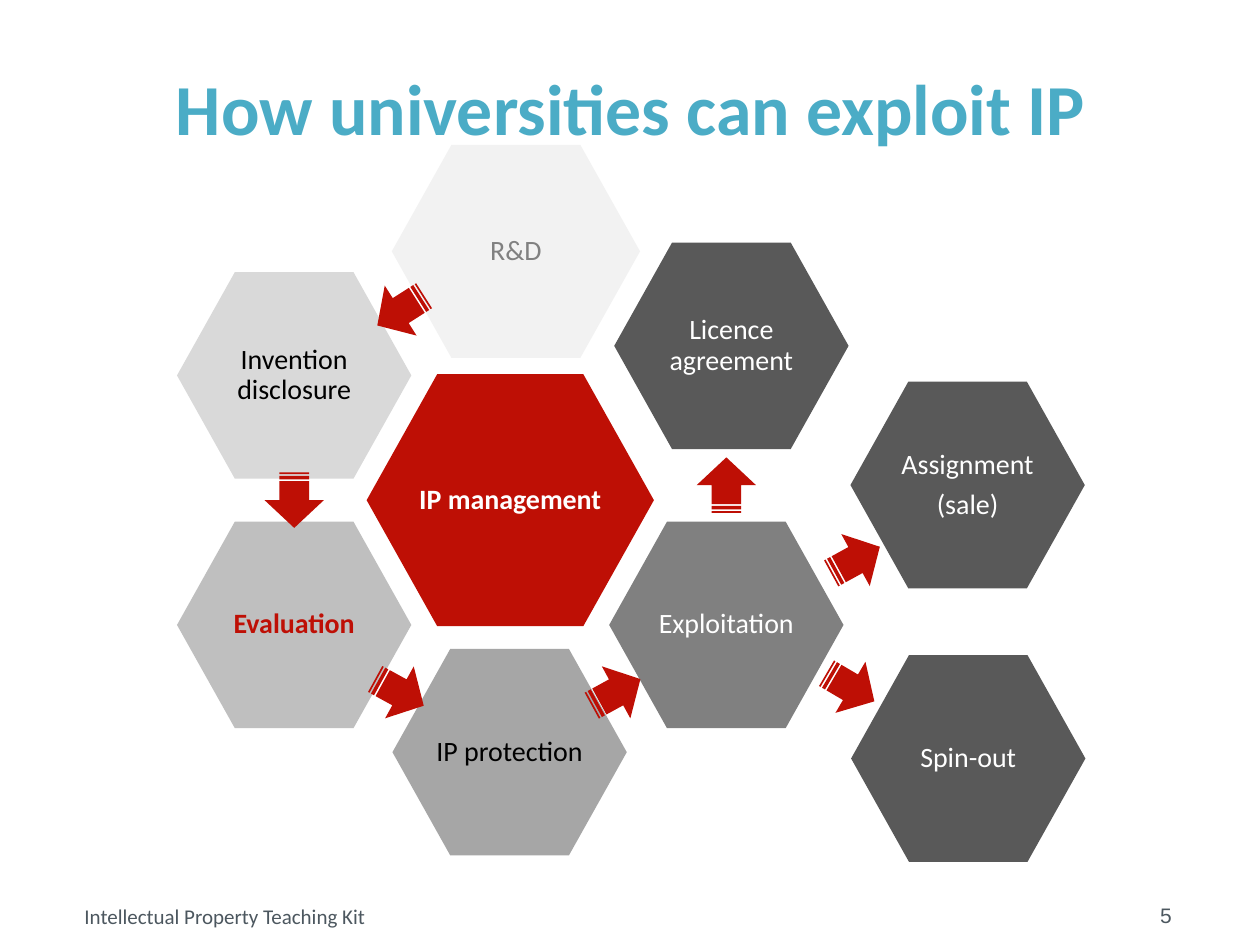
from pptx import Presentation
from pptx.dml.color import RGBColor
from pptx.enum.shapes import MSO_SHAPE
from pptx.enum.text import MSO_ANCHOR, PP_ALIGN
from pptx.util import Inches, Pt

COLUMNS, ROWS = 100, 75
RED, WHITE, BLACK = "BE0F05", "FFFFFF", "000000"
TEAL, SLATE = "4BACC6", "4C575F"
MID_GREY, DARK_GREY = "808080", "595959"

STEP_SIZE = (18.6, 16.4)
ARROW_SIZE = (4.4, 4.7)

STAGES = [
    ("IP management", (40.5, 39.7), (22.8, 20), RED, WHITE, True),
    ("R&D", (40.95, 19.95), (19.7, 16.9), "F2F2F2", MID_GREY, False),
    ("Invention disclosure", (23.35, 29.8), STEP_SIZE, "D9D9D9", BLACK, False),
    ("Evaluation", (23.35, 49.6), STEP_SIZE, "BFBFBF", RED, True),
    ("IP protection", (40.45, 59.7), STEP_SIZE, "A6A6A6", BLACK, False),
    ("Exploitation", (57.65, 49.6), STEP_SIZE, MID_GREY, WHITE, False),
    ("Licence agreement", (58.05, 27.45), STEP_SIZE, DARK_GREY, WHITE, False),
    ("Assignment\n(sale)", (76.8, 38.5), STEP_SIZE, DARK_GREY, WHITE, False),
    ("Spin-out", (76.85, 60.2), STEP_SIZE, DARK_GREY, WHITE, False),
]

FLOW = [
    ((31.8, 24.65), 147.5),
    ((23.35, 39.7), 90),
    ((31.7, 54.95), 28.8),
    ((48.9, 54.95), 331.3),
    ((57.65, 38.5), 270),
    ((67.9, 44.45), 331.3),
    ((67.5, 54.55), 30.4),
]


def colour(hex_string):
    return RGBColor.from_string(hex_string)


def write(frame, words, size=16, font="Calibri", ink=BLACK, bold=False,
          align=PP_ALIGN.CENTER, anchor=MSO_ANCHOR.MIDDLE, inset=0,
          line_spacing=1.0, after=0):
    frame.text = words
    frame.word_wrap = True
    frame.vertical_anchor = anchor
    frame.margin_left = frame.margin_right = Inches(inset)
    frame.margin_top = frame.margin_bottom = Inches(inset)
    for paragraph in frame.paragraphs:
        paragraph.alignment = align
        paragraph.line_spacing = line_spacing
        paragraph.space_after = Pt(after)
        for run in paragraph.runs:
            run.font.size = Pt(size)
            run.font.name = font
            run.font.bold = bold
            run.font.color.rgb = colour(ink)


class Board:
    def __init__(self, deck):
        self.column = deck.slide_width / COLUMNS
        self.row = deck.slide_height / ROWS
        self.slide = deck.slides.add_slide(deck.slide_layouts[5])

    def box(self, left, top, width, height):
        return (round(left * self.column), round(top * self.row),
                round(width * self.column), round(height * self.row))

    def title(self, words, place):
        heading = self.slide.shapes.title
        heading.left, heading.top, heading.width, heading.height = self.box(*place)
        write(heading.text_frame, words, size=41, ink=TEAL, bold=True, inset=0.05)

    def label(self, words, place, **style):
        caption = self.slide.shapes.add_textbox(*self.box(*place))
        write(caption.text_frame, words, size=12, ink=SLATE, **style)

    def solid(self, preset, centre, size, fill):
        (x, y), (width, height) = centre, size
        place = self.box(x - width / 2, y - height / 2, width, height)
        figure = self.slide.shapes.add_shape(preset, *place)
        figure.shadow.inherit = False
        figure.fill.solid()
        figure.fill.fore_color.rgb = colour(fill)
        figure.line.fill.background()
        return figure

    def stage(self, words, centre, size, fill, ink, bold):
        hexagon = self.solid(MSO_SHAPE.HEXAGON, centre, size, fill)
        hexagon.adjustments[0] = 0.28
        write(hexagon.text_frame, words, ink=ink, bold=bold,
              line_spacing=0.9, after=5.6)

    def arrow(self, centre, angle):
        pointer = self.solid(MSO_SHAPE.STRIPED_RIGHT_ARROW, centre, ARROW_SIZE, RED)
        pointer.rotation = angle


def main():
    deck = Presentation()
    deck.slide_width, deck.slide_height = Inches(10), Inches(7.5)
    board = Board(deck)
    board.title("How universities can exploit IP", (6.8, 3.4, 86.6, 10.1))
    for stage in STAGES:
        board.stage(*stage)
    for centre, angle in FLOW:
        board.arrow(centre, angle)
    board.label("Intellectual Property Teaching Kit", (6.7, 71.7, 59.1, 3.3),
                align=PP_ALIGN.LEFT, anchor=MSO_ANCHOR.TOP)
    board.label("5", (84.7, 71.4, 8.3, 2.4), font="Arial", align=PP_ALIGN.RIGHT)
    deck.save("out.pptx")


if __name__ == "__main__":
    main()
